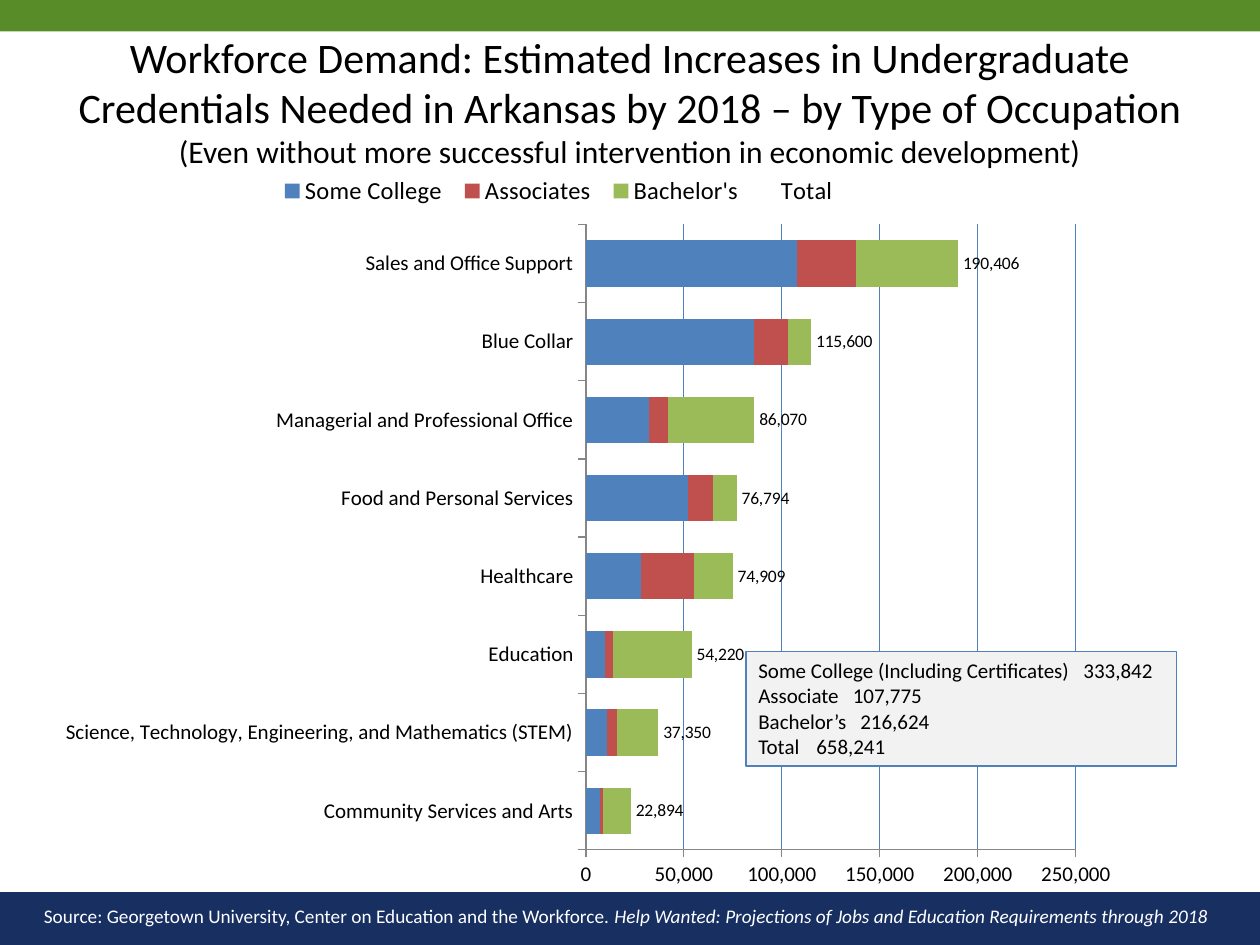
"""Build the Arkansas workforce demand slide with its stacked bar chart."""
from lxml import etree
from pptx import Presentation
from pptx.chart.data import CategoryChartData
from pptx.dml.color import RGBColor
from pptx.enum import chart as ch, shapes, text
from pptx.oxml import ns
from pptx.util import Inches, Pt

NAVY = RGBColor(0x18, 0x2F, 0x62)
GREEN = RGBColor(0x58, 0x8C, 0x28)
BLACK = RGBColor(0, 0, 0)
WHITE = RGBColor(0xFF, 0xFF, 0xFF)
PALE = RGBColor(0xF2, 0xF2, 0xF2)
AXIS_GRAY = RGBColor(0x86, 0x86, 0x86)
BLUE = RGBColor(0x4F, 0x81, 0xBD)
RED = RGBColor(0xC0, 0x50, 0x4D)
LIME = RGBColor(0x9B, 0xBB, 0x59)
FONT = "Calibri"

BANDS = [((0, 7.08, 10, 0.42), NAVY), ((0, 0, 10, 0.25), GREEN)]
TITLE = [
    [("Workforce Demand: Estimated Increases in Undergraduate Credentials Needed "
      "in Arkansas by 2018 – by Type of Occupation", {"size": Pt(24)})],
    [("(Even without more successful intervention in economic development)",
      {"size": Pt(18)})],
]
SOURCE = [[
    ("Source: Georgetown University, Center on Education and the Workforce. ",
     {"size": Pt(11)}),
    ("Help Wanted: Projections of Jobs and Education Requirements through 2018",
     {"size": Pt(11), "italic": True}),
]]
TOTALS = [
    ("Some College (Including Certificates)", "333,842", 2.58),
    ("Associate", "107,775", 0.75),
    ("Bachelor’s", "216,624", 0.81),
    ("Total", "658,241", 0.46),
]
SERIES = {"Some College": BLUE, "Associates": RED, "Bachelor's": LIME, "Total": None}
OCCUPATIONS = [
    ("Community Services and Arts", 7000, 2000, 14000, 22894),
    ("Science, Technology, Engineering, and Mathematics (STEM)",
     11000, 5000, 21000, 37350),
    ("Education", 10000, 4000, 40000, 54220),
    ("Healthcare", 28000, 27000, 20000, 74909),
    ("Food and Personal Services", 52000, 13000, 12000, 76794),
    ("Managerial and Professional Office", 32000, 10000, 44000, 86070),
    ("Blue Collar", 86000, 17000, 12000, 115600),
    ("Sales and Office Support", 108000, 30000, 52000, 190406),
]
PLOT_AREA = {"x": 0.5, "y": 0.09, "w": 0.45, "h": 0.84}
LEGEND_AREA = {"x": 0.21, "y": 0.02, "w": 0.53, "h": 0.05}


def apply(target, values):
    for name, value in values.items():
        setattr(target, name, value)


def style_font(font, color, **values):
    apply(font, {"name": FONT, **values})
    font.color.rgb = color


def add_rect(slide, box, fill, line=None):
    rect = slide.shapes.add_shape(shapes.MSO_SHAPE.RECTANGLE, *map(Inches, box))
    rect.shadow.inherit = False
    rect.fill.solid()
    rect.fill.fore_color.rgb = fill
    if line is None:
        rect.line.fill.background()
    else:
        rect.line.color.rgb = line
        rect.line.width = Pt(0.75)
    return rect


def write(frame, paragraphs, color, align):
    apply(frame, {"word_wrap": True, "vertical_anchor": text.MSO_ANCHOR.TOP,
                  "auto_size": text.MSO_AUTO_SIZE.SHAPE_TO_FIT_TEXT})
    for index, runs in enumerate(paragraphs):
        line = frame.add_paragraph() if index else frame.paragraphs[0]
        line.alignment = align
        for words, values in runs:
            run = line.add_run()
            run.text = words
            style_font(run.font, color, **values)


def set_tab(paragraph, inches):
    tabs = etree.SubElement(paragraph._p.get_or_add_pPr(), ns.qn("a:tabLst"))
    etree.SubElement(tabs, ns.qn("a:tab"), pos=str(Inches(inches)), algn="l")


def set_layout(parent, area, inner=False):
    for old in parent.findall(ns.qn("c:layout")):
        parent.remove(old)
    layout = etree.Element(ns.qn("c:layout"))
    manual = etree.SubElement(layout, ns.qn("c:manualLayout"))
    settings = {"xMode": "edge", "yMode": "edge", **area}
    if inner:
        settings = {"layoutTarget": "inner", **settings}
    for name, value in settings.items():
        etree.SubElement(manual, ns.qn("c:" + name), val=str(value))
    parent.insert(0 if inner else 1, layout)


def add_demand_chart(slide):
    data = CategoryChartData(number_format="#,##0")
    names, *columns = zip(*OCCUPATIONS)
    data.categories = names
    for name, values in zip(SERIES, columns):
        data.add_series(name, values)
    box = map(Inches, (0.33, 1.25, 8.64, 5.91))
    chart = slide.shapes.add_chart(ch.XL_CHART_TYPE.BAR_STACKED, *box, data).chart
    style_font(chart.font, BLACK, size=Pt(10))
    apply(chart, {"has_title": False, "has_legend": True})
    apply(chart.legend, {"position": ch.XL_LEGEND_POSITION.TOP,
                         "include_in_layout": False})
    style_font(chart.legend.font, BLACK, size=Pt(14))

    bars = chart.plots[0]
    apply(bars, {"gap_width": 69, "overlap": 100, "vary_by_categories": False})
    for series, color in zip(bars.series, SERIES.values()):
        series.format.line.fill.background()
        if color is None:
            series.format.fill.background()
            labels = series.data_labels
            apply(labels, {"show_value": True, "number_format": "#,##0",
                           "number_format_is_linked": False,
                           "position": ch.XL_LABEL_POSITION.INSIDE_BASE})
            style_font(labels.font, BLACK, size=Pt(10))
        else:
            series.format.fill.solid()
            series.format.fill.fore_color.rgb = color

    for axis in (chart.category_axis, chart.value_axis):
        axis.major_tick_mark = ch.XL_TICK_MARK.OUTSIDE
        axis.format.line.color.rgb = AXIS_GRAY
        style_font(axis.tick_labels.font, BLACK, size=Pt(12))
    amounts = chart.value_axis
    apply(amounts, {"minimum_scale": 0, "maximum_scale": 250000,
                    "major_unit": 50000, "has_major_gridlines": True})
    apply(amounts.tick_labels, {"number_format": "#,##0",
                                "number_format_is_linked": False})
    grid = amounts.major_gridlines.format.line
    grid.color.rgb = BLUE
    grid.width = Pt(0.75)
    set_layout(chart._chartSpace.chart.plotArea, PLOT_AREA, inner=True)
    set_layout(chart.legend._element, LEGEND_AREA)


def main():
    deck = Presentation()
    apply(deck, {"slide_width": Inches(10), "slide_height": Inches(7.5)})
    slide = deck.slides.add_slide(deck.slide_layouts[6])
    for box, color in BANDS:
        add_rect(slide, box, color)
    for box, content, color, align in (
        ((0.25, 0.2, 9.5, 1.21), TITLE, BLACK, text.PP_ALIGN.CENTER),
        ((0.25, 7.13, 9.58, 0.29), SOURCE, WHITE, text.PP_ALIGN.LEFT),
    ):
        frame = slide.shapes.add_textbox(*map(Inches, box)).text_frame
        write(frame, content, color, align)
    add_demand_chart(slide)
    summary = add_rect(slide, (5.92, 5.17, 3.42, 0.91), PALE, BLUE).text_frame
    rows = [[(f"{label}\t{amount}", {"size": Pt(12)})] for label, amount, _ in TOTALS]
    write(summary, rows, BLACK, text.PP_ALIGN.LEFT)
    for paragraph, (_, _, stop) in zip(summary.paragraphs, TOTALS):
        set_tab(paragraph, stop)
    deck.save("out.pptx")


if __name__ == "__main__":
    main()
